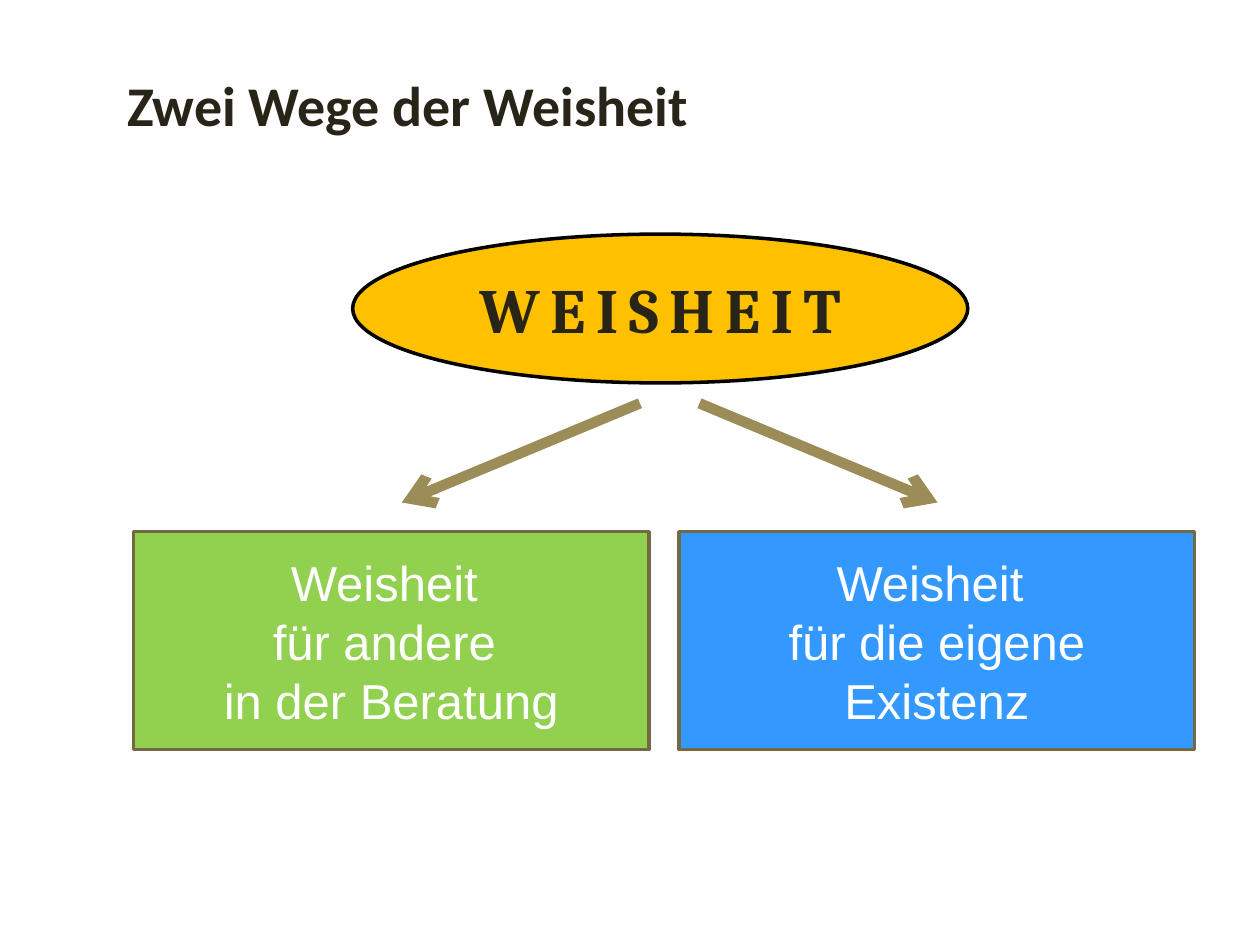
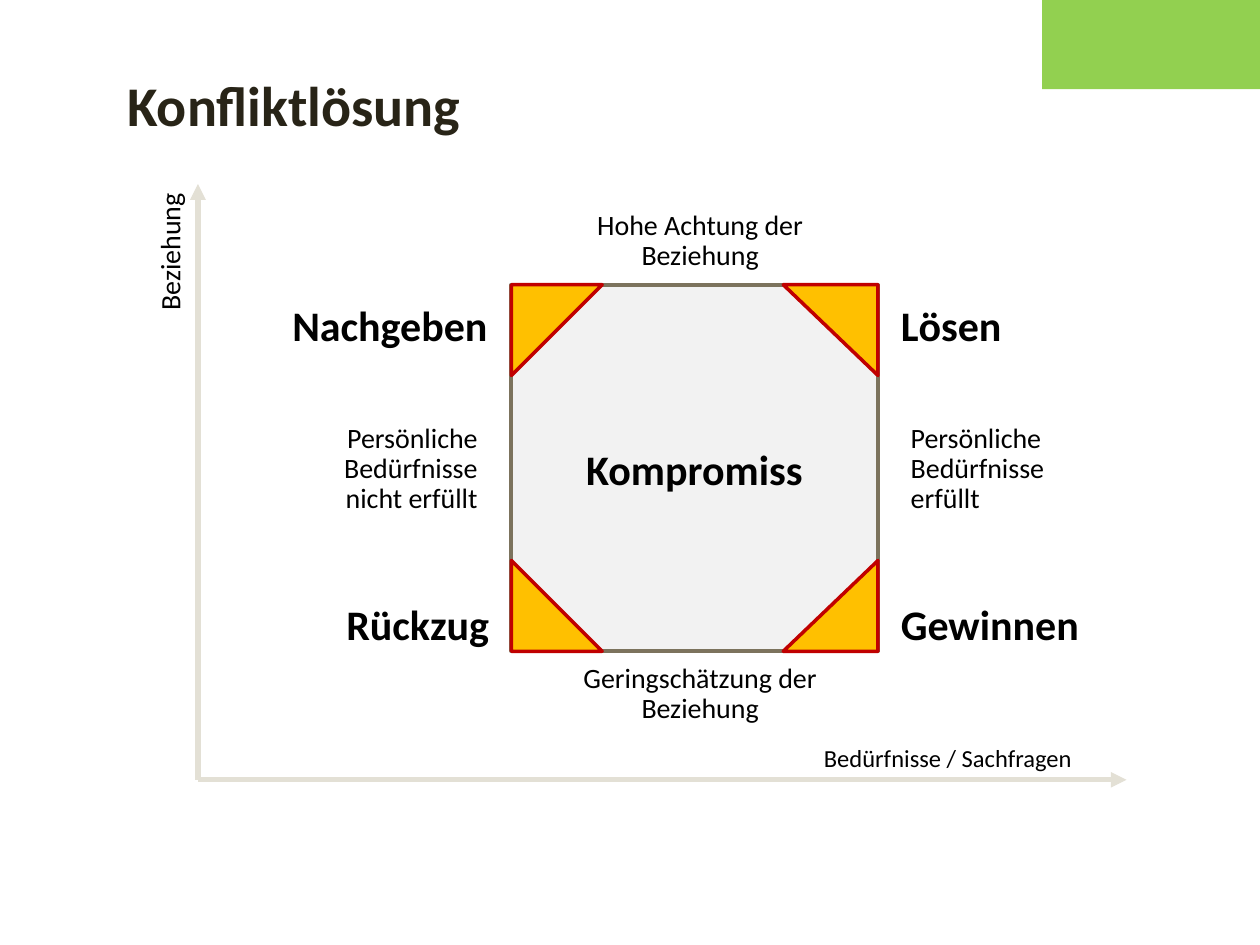
import pptx
import pptx.dml.color
import pptx.enum.shapes
import pptx.enum.text
import pptx.oxml.ns
import pptx.util
import lxml.etree

Cm = pptx.util.Cm
Pt = pptx.util.Pt
ALIGN = pptx.enum.text.PP_ALIGN
ANCHOR = pptx.enum.text.MSO_ANCHOR
SHAPE = pptx.enum.shapes.MSO_SHAPE
qn = pptx.oxml.ns.qn

COLORS = {
    "title": "282417",
    "black": "000000",
    "white": "FFFFFF",
    "green": "92D050",
    "blue": "3399FF",
    "gold": "FFC000",
    "red": "C00000",
    "box_line": "756944",
    "arrow": "9C8C58",
    "axis": "E3E0D5",
    "square": "F2F2F2",
    "square_line": "7C735D",
}

TITLE = {"name": "Calibri", "size": Pt(32), "bold": True, "color": "title"}
BOX = {"name": "Arial", "size": Pt(28), "color": "white"}
WISDOM = {"name": "Cambria", "size": Pt(36), "bold": True, "color": "title"}
STRATEGY = {"name": "Calibri", "size": Pt(24), "bold": True, "color": "black"}
LABEL = {"name": "Calibri", "size": Pt(16), "color": "black"}
AXIS_LABEL = {**LABEL, "size": Pt(14)}


def rgb(color):
    return pptx.dml.color.RGBColor.from_string(COLORS[color])


def write(tf, text, fmt, align=ALIGN.LEFT, anchor=ANCHOR.TOP, spacing=None):
    tf.word_wrap = True
    tf.vertical_anchor = anchor
    p = tf.paragraphs[0]
    p.text = text
    p.alignment = align
    p.line_spacing = spacing
    for r in p.runs:
        for key, value in fmt.items():
            if key == "color":
                r.font.color.rgb = rgb(value)
            else:
                setattr(r.font, key, value)
    return p


def paint(sp, fill, line=None, width=2):
    sp.shadow.inherit = False
    sp.fill.solid()
    sp.fill.fore_color.rgb = rgb(fill)
    if line:
        sp.line.color.rgb = rgb(line)
        sp.line.width = Pt(width)
    else:
        sp.line.fill.background()


def add_slide(prs, title):
    s = prs.slides.add_slide(prs.slide_layouts[5])
    sp = s.shapes.title
    sp.left, sp.top, sp.width, sp.height = Cm(2.31), Cm(0.71), Cm(22.2), Cm(2.79)
    write(sp.text_frame, title, TITLE, anchor=ANCHOR.MIDDLE)
    return s


def add_shape(s, kind, at, fill, line=None, width=2):
    sp = s.shapes.add_shape(kind, *map(Cm, at))
    paint(sp, fill, line, width)
    return sp


def add_label(s, text, at, fmt, align=ALIGN.LEFT, spacing=None):
    sp = s.shapes.add_textbox(*map(Cm, at))
    write(sp.text_frame, text, fmt, align, spacing=spacing)
    return sp


def add_arrow(s, start, end, color, width, head):
    line = s.shapes.add_connector(
        pptx.enum.shapes.MSO_CONNECTOR.STRAIGHT, *map(Cm, start + end))
    line.line.color.rgb = rgb(color)
    line.line.width = Pt(width)
    lxml.etree.SubElement(line.line._get_or_add_ln(), qn("a:tailEnd"), type=head)
    lxml.etree.SubElement(line._element.spPr, qn("a:effectLst"))


def add_corner(s, x, y, dx, dy):
    fb = s.shapes.build_freeform(Cm(x), Cm(y + dy))
    fb.add_line_segments([(Cm(x), Cm(y)), (Cm(x + dx), Cm(y))], close=True)
    paint(fb.convert_to_shape(), "gold", "red")


def build_wisdom(prs):
    s = add_slide(prs, "Zwei Wege der Weisheit")
    paths = [
        (2.69, "green", "Weisheit \nfür andere \nin der Beratung"),
        (13.69, "blue", "Weisheit \nfür die eigene Existenz"),
    ]
    for left, fill, text in paths:
        sp = add_shape(s, SHAPE.RECTANGLE, (left, 10.72, 10.39, 4.39), fill, "box_line")
        write(sp.text_frame, text, BOX, ALIGN.CENTER, ANCHOR.MIDDLE)
    sp = add_shape(s, SHAPE.OVAL, (7.11, 4.72, 12.4, 3), "gold", "black")
    p = write(sp.text_frame, "WEISHEIT", WISDOM, ALIGN.CENTER, ANCHOR.MIDDLE)
    p.runs[0].font._element.set("spc", "600")
    for start, end in ((14.1, 18.9), (12.9, 8.1)):
        add_arrow(s, (start, 8.13), (end, 10.13), "arrow", 6, "arrow")


def build_conflict(prs):
    s = add_slide(prs, "Konfliktlösung")
    add_shape(s, SHAPE.RECTANGLE, (21.01, 0, 4.39, 1.8), "green")

    origin = (3.99, 15.72)
    for end in ((3.99, 3.71), (22.71, 15.72)):
        add_arrow(s, origin, end, "axis", 3, "triangle")
    add_label(s, "Beziehung", (1.83, 4.45, 3.18, 0.94), LABEL).rotation = 270
    add_label(s, "Bedürfnisse / Sachfragen", (16.36, 14.86, 5.99, 0.86), AXIS_LABEL)

    left, top, side = 10.31, 5.74, 7.39
    right, bottom = left + side, top + side
    add_shape(s, SHAPE.RECTANGLE, (left, top, side, side), "square", "square_line", 2.25)

    strategies = [
        ("Kompromiss", 10.95, 8.81, 6.1, ALIGN.CENTER),
        ("Lösen", 17.91, 5.92, 4.39, ALIGN.LEFT),
        ("Gewinnen", 17.91, 11.94, 5.21, ALIGN.LEFT),
        ("Rückzug", 5.11, 11.94, 5, ALIGN.RIGHT),
        ("Nachgeben", 4.7, 5.92, 5.38, ALIGN.RIGHT),
    ]
    for text, x, y, width, align in strategies:
        add_label(s, text, (x, y, width, 1.27), STRATEGY, align)

    sides = [
        ("Geringschätzung der\nBeziehung", (9.91, 13.26, 8.41, 1.47), ALIGN.CENTER),
        ("Hohe Achtung der\nBeziehung", (9.91, 4.14, 8.41, 1.47), ALIGN.CENTER),
        ("Persönliche Bedürfnisse\nnicht erfüllt", (5.69, 8.43, 4.19, 2.08), ALIGN.RIGHT),
        ("Persönliche Bedürfnisse\nerfüllt", (18.11, 8.43, 4.19, 2.08), ALIGN.LEFT),
    ]
    for text, at, align in sides:
        add_label(s, text, at, LABEL, align, 0.9)

    for x, dx in ((left, 1.83), (right, -1.91)):
        for y, dy in ((top, 1.83), (bottom, -1.83)):
            add_corner(s, x, y, dx, dy)


def main():
    prs = pptx.Presentation()
    prs.slide_width, prs.slide_height = Cm(25.4), Cm(19.05)
    build_wisdom(prs)
    build_conflict(prs)
    prs.save("out.pptx")


if __name__ == "__main__":
    main()
